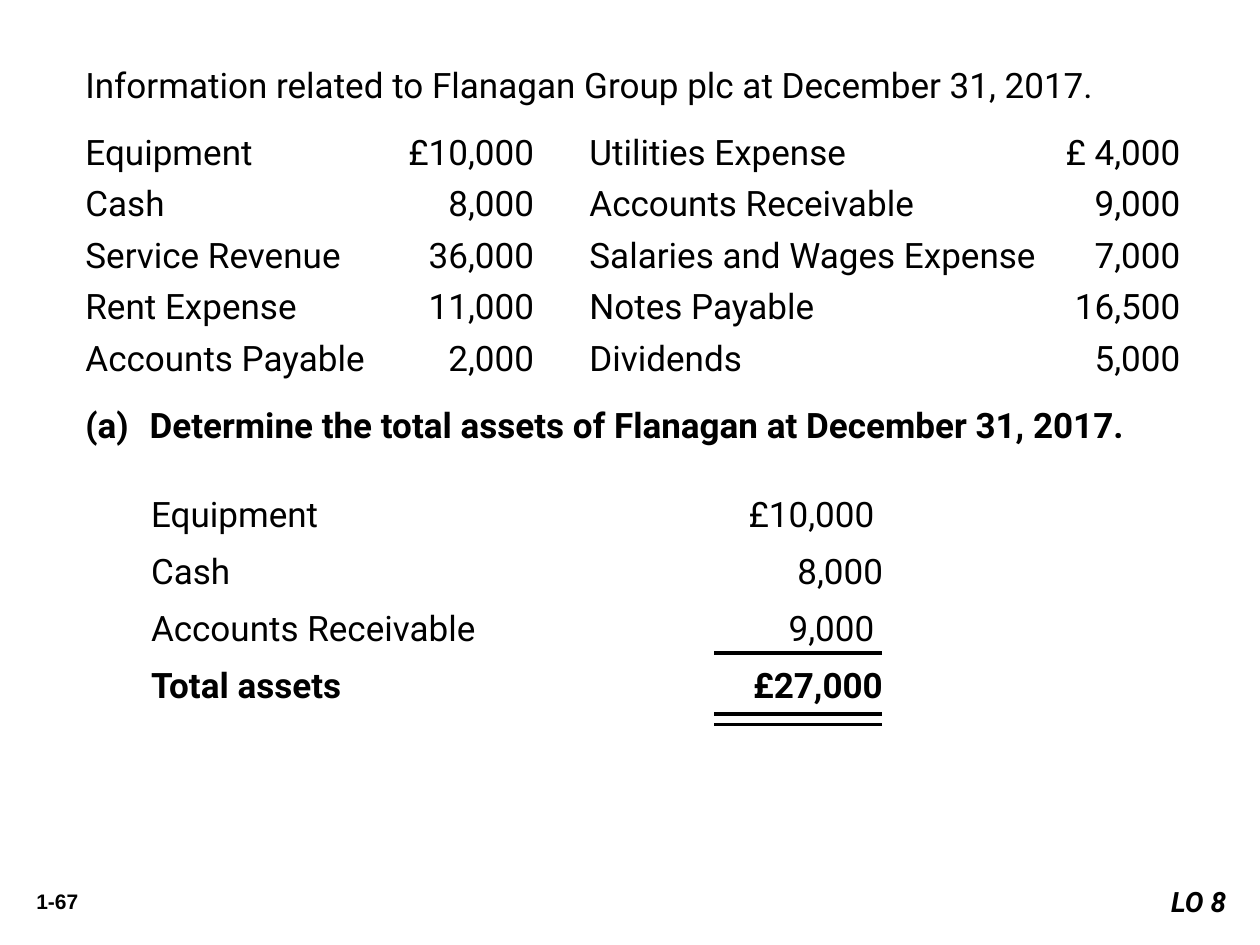
from dataclasses import dataclass

from lxml import etree
from pptx import Presentation
from pptx import util as u
from pptx.dml.color import RGBColor
from pptx.enum import shapes, text
from pptx.oxml import ns

BLACK = RGBColor(0, 0, 0)
WHITE = RGBColor(255, 255, 255)
COLUMNS, ROWS = 100, 75
WIDTH, HEIGHT = u.Inches(10), u.Inches(7.5)


@dataclass(frozen=True)
class Area:
    column: float
    row: float
    columns: float
    rows: float


@dataclass(frozen=True)
class Tab:
    column: float
    align: str = "r"


@dataclass(frozen=True)
class Line:
    words: str
    tabs: tuple[Tab, ...] = ()
    before: float = 0
    bold: bool = False
    hanging: float = 0


@dataclass(frozen=True)
class Style:
    size: float = 20
    name: str = "Roboto"
    italic: bool = False
    align: text.PP_ALIGN = text.PP_ALIGN.LEFT
    spacing: float = 1.1


EDGE = Tab(86.9)
ACCOUNT_TABS = (Tab(36.3), Tab(40, "l"), EDGE)
TOTAL_TABS = (Tab(58.1), EDGE)
ACCOUNTS = (
    ("Equipment", "£10,000", "Utilities Expense", "£ 4,000"),
    ("Cash", "8,000", "Accounts Receivable", "9,000"),
    ("Service Revenue", "36,000", "Salaries and Wages Expense", "7,000"),
    ("Rent Expense", "11,000", "Notes Payable", "16,500"),
    ("Accounts Payable", "2,000", "Dividends", "5,000"),
)
ASSETS = ("Equipment \t£10,000 ", "Cash \t8,000", "Accounts Receivable \t9,000 ")
RULE_ROWS = (51.8, 56.7, 57.5)


def across(columns: float) -> int:
    return round(WIDTH * columns / COLUMNS)


def down(rows: float) -> int:
    return round(HEIGHT * rows / ROWS)


def add_tabs(para, tabs: tuple[Tab, ...]) -> None:
    tab_list = etree.SubElement(para._p.get_or_add_pPr(), ns.qn("a:tabLst"))
    for tab in tabs:
        etree.SubElement(tab_list, ns.qn("a:tab"), pos=str(across(tab.column)), algn=tab.align)


def write(box, lines: list[Line], style: Style) -> None:
    frame = box.text_frame
    frame.word_wrap = True
    frame.vertical_anchor = text.MSO_ANCHOR.TOP
    for index, line in enumerate(lines):
        para = frame.add_paragraph() if index else frame.paragraphs[0]
        para.text = line.words
        if line.tabs:
            add_tabs(para, line.tabs)
        if line.hanging:
            properties = para._p.get_or_add_pPr()
            properties.set("marL", str(across(line.hanging)))
            properties.set("indent", str(-across(line.hanging)))
        para.alignment = style.align
        para.line_spacing = style.spacing
        para.space_before = u.Pt(line.before)
        para.font.name = style.name
        para.font.size = u.Pt(style.size)
        para.font.bold = line.bold
        para.font.italic = style.italic
        para.font.color.rgb = BLACK


def place(area: Area) -> tuple[int, int, int, int]:
    return across(area.column), down(area.row), across(area.columns), down(area.rows)


def add_text(page, area: Area, lines: list[Line], style: Style = Style()) -> None:
    write(page.shapes.add_textbox(*place(area)), lines, style)


def add_objective(page, area: Area) -> None:
    box = page.shapes.add_shape(shapes.MSO_SHAPE.RECTANGLE, *place(area))
    box.shadow.inherit = False
    box.fill.solid()
    box.fill.fore_color.rgb = WHITE
    box.line.fill.background()
    style = Style(16, italic=True, align=text.PP_ALIGN.RIGHT, spacing=1)
    write(box, [Line("LO 8", bold=True)], style)


def add_rule(page, row: float) -> None:
    rule = page.shapes.add_connector(
        shapes.MSO_CONNECTOR.STRAIGHT, across(70), down(row), across(56.7), down(row))
    rule.line.color.rgb = BLACK
    rule.line.width = u.Pt(2.25)
    etree.SubElement(rule._element.spPr, ns.qn("a:effectLst"))


def main() -> None:
    deck = Presentation()
    deck.slide_width, deck.slide_height = WIDTH, HEIGHT
    page = deck.slides.add_slide(deck.slide_layouts[6])

    add_text(page, Area(0.8, 70, 7.5, 3), [Line("1-67", bold=True)],
             Style(12, "Arial", align=text.PP_ALIGN.CENTER, spacing=1))
    add_objective(page, Area(90, 69.7, 8.3, 3.7))

    accounts = [Line(" \t".join(row), ACCOUNT_TABS, 3 if index else 12)
                for index, row in enumerate(ACCOUNTS)]
    add_text(page, Area(5.8, 4.2, 90, 32), [
        Line("Information related to Flanagan Group plc at December 31, 2017."),
        *accounts,
        Line("(a) \tDetermine the total assets of Flanagan at December 31, 2017.",
             (EDGE,), 12, True, 5.1),
    ])

    assets = [Line(words, TOTAL_TABS, 6 if index else 0) for index, words in enumerate(ASSETS)]
    total = Line("Total assets\t£27,000", TOTAL_TABS, 6, True)
    add_text(page, Area(11, 38.3, 79.2, 18.3), [*assets, total])
    for row in RULE_ROWS:
        add_rule(page, row)

    deck.save("out.pptx")


if __name__ == "__main__":
    main()
